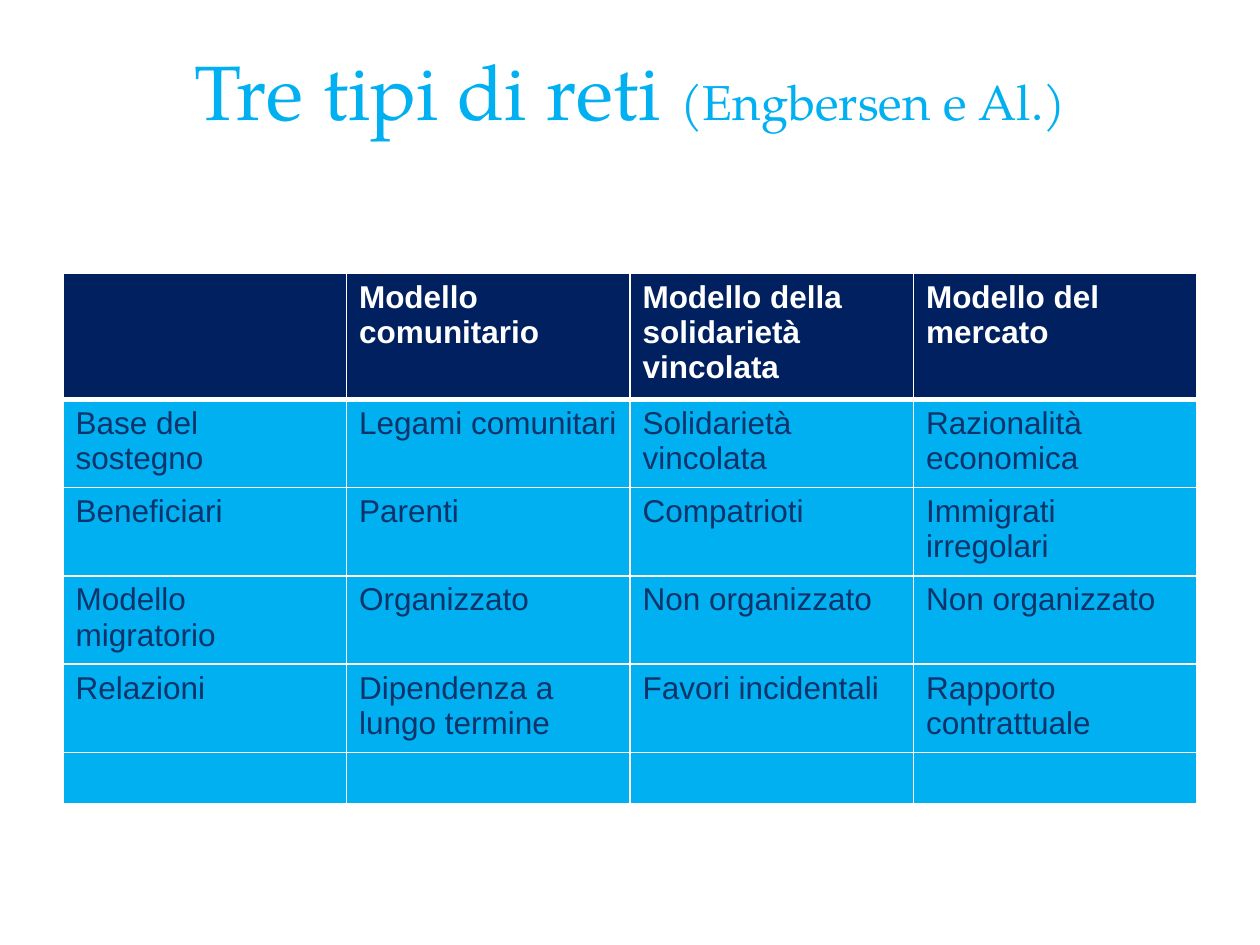
from lxml import etree
from pptx import Presentation
from pptx.dml.color import RGBColor
from pptx.enum.text import MSO_ANCHOR, PP_ALIGN
from pptx.oxml.ns import qn
from pptx.util import Pt

TOP = MSO_ANCHOR.TOP
CENTER = PP_ALIGN.CENTER

COLORS = {"sky": "00B0F0", "navy": "002060", "ink": "0C346B", "white": "FFFFFF"}
TITLE_FONT = "TeX Gyre Pagella"
TABLE_FONT = "Arial"

TITLE = [("Tre tipi di reti ", 44), ("(Engbersen e Al.)", 28)]
ROWS = [
    ("", "Modello comunitario", "Modello della solidarietà vincolata", "Modello del mercato"),
    ("Base del sostegno", "Legami comunitari", "Solidarietà vincolata", "Razionalità economica"),
    ("Beneficiari", "Parenti", "Compatrioti", "Immigrati irregolari"),
    ("Modello migratorio", "Organizzato", "Non organizzato", "Non organizzato"),
    ("Relazioni", "Dipendenza a lungo termine", "Favori incidentali", "Rapporto contrattuale"),
    ("", "", "", ""),
]
HEADER_HEIGHT, BODY_HEIGHT, LAST_HEIGHT = 72, 50.4, 29.5
HEIGHTS = [HEADER_HEIGHT] + [BODY_HEIGHT] * (len(ROWS) - 2) + [LAST_HEIGHT]

SLIDE_WIDTH, SLIDE_HEIGHT, MARGIN = 720, 540, 36
CONTENT_WIDTH = SLIDE_WIDTH - 2 * MARGIN
TITLE_TOP, TITLE_HEIGHT = 21.6, 90
TABLE_TOP = 156.24


def format_font(font, color, **values):
    font.color.rgb = RGBColor.from_string(COLORS[color])
    for name, value in values.items():
        setattr(font, name, value)


def add_title(slide):
    box = slide.shapes.add_textbox(Pt(MARGIN), Pt(TITLE_TOP), Pt(CONTENT_WIDTH), Pt(TITLE_HEIGHT))
    frame = box.text_frame
    frame.word_wrap = True
    frame.vertical_anchor = TOP
    para = frame.paragraphs[0]
    para.alignment = CENTER
    for text, size in TITLE:
        span = para.add_run()
        span.text = text
        format_font(span.font, "sky", name=TITLE_FONT, size=Pt(size))


def set_borders(cell, widths):
    """Draw white cell edges; must run before the fill is set."""
    properties = cell._tc.get_or_add_tcPr()
    for side, width in widths.items():
        line = etree.SubElement(properties, qn(f"a:ln{side}"), w=str(Pt(width)))
        fill = etree.SubElement(line, qn("a:solidFill"))
        etree.SubElement(fill, qn("a:srgbClr"), val=COLORS["white"])


def add_network_table(slide):
    column_count = len(ROWS[0])
    table = slide.shapes.add_table(
        len(ROWS), column_count, Pt(MARGIN), Pt(TABLE_TOP), Pt(CONTENT_WIDTH), Pt(sum(HEIGHTS))
    ).table
    for column in table.columns:
        column.width = Pt(CONTENT_WIDTH / column_count)
    for row_index, (texts, height) in enumerate(zip(ROWS, HEIGHTS)):
        header = row_index == 0
        table.rows[row_index].height = Pt(height)
        widths = {"L": 1, "R": 1, "T": 3 if row_index == 1 else 1, "B": 3 if header else 1}
        for column_index, text in enumerate(texts):
            cell = table.cell(row_index, column_index)
            set_borders(cell, widths)
            cell.fill.solid()
            cell.fill.fore_color.rgb = RGBColor.from_string(COLORS["navy" if header else "sky"])
            if text:
                span = cell.text_frame.paragraphs[0].add_run()
                span.text = text
                format_font(span.font, "white" if header else "ink",
                            name=TABLE_FONT, size=Pt(18), bold=header)


def main():
    deck = Presentation()
    deck.slide_width, deck.slide_height = Pt(SLIDE_WIDTH), Pt(SLIDE_HEIGHT)
    slide = deck.slides.add_slide(deck.slide_layouts[6])
    add_title(slide)
    add_network_table(slide)
    deck.save("out.pptx")


if __name__ == "__main__":
    main()
